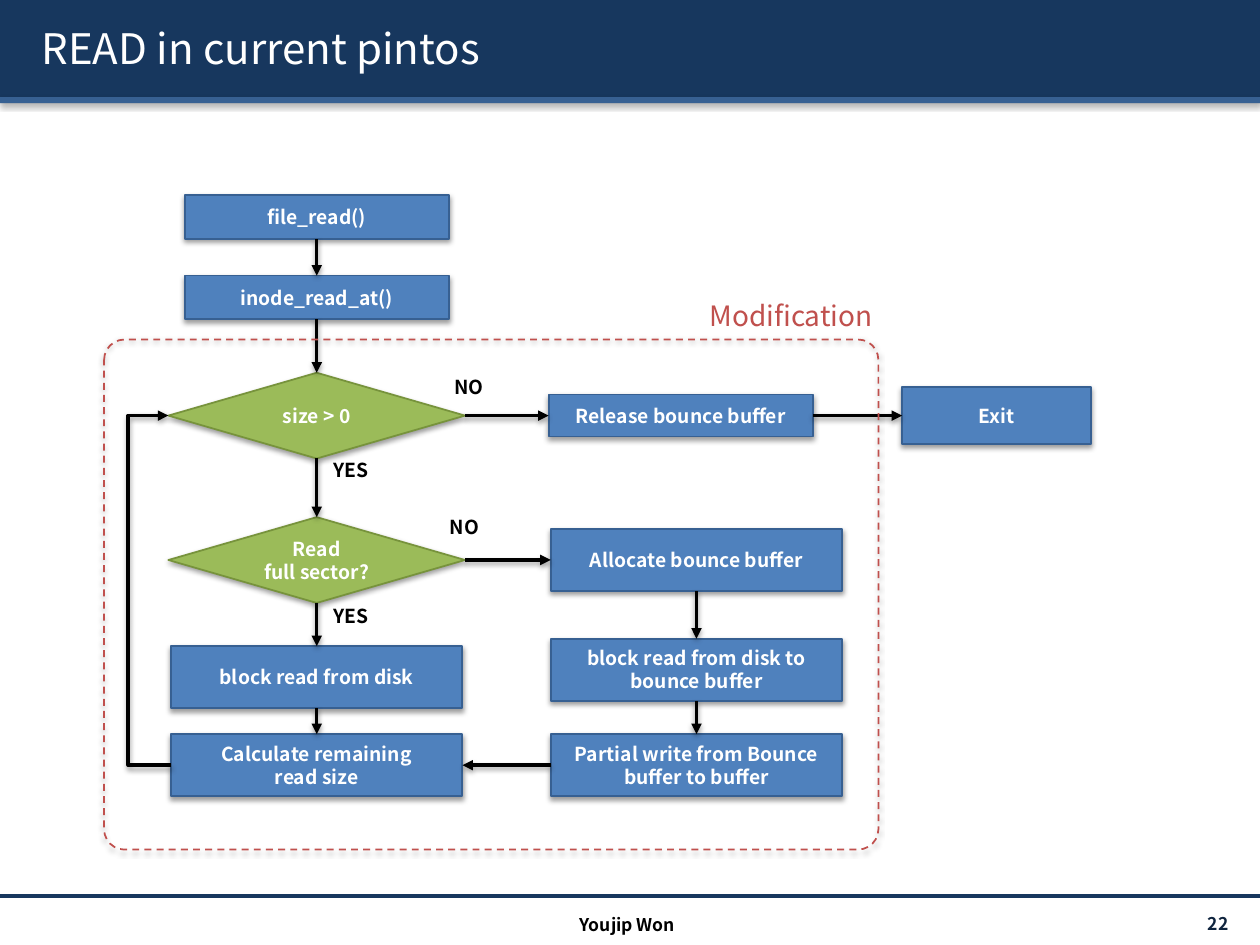
from lxml import etree
from pptx import Presentation
from pptx.dml.color import RGBColor
from pptx.enum.dml import MSO_LINE
from pptx.enum.shapes import MSO_CONNECTOR, MSO_SHAPE
from pptx.enum.text import MSO_ANCHOR, PP_ALIGN
from pptx.oxml import parse_xml
from pptx.oxml.ns import nsdecls, qn
from pptx.util import Pt

RECT, DIAMOND, ROUND = MSO_SHAPE.RECTANGLE, MSO_SHAPE.DIAMOND, MSO_SHAPE.ROUNDED_RECTANGLE
STRAIGHT, ELBOW = MSO_CONNECTOR.STRAIGHT, MSO_CONNECTOR.ELBOW
LEFT, CENTER, RIGHT = PP_ALIGN.LEFT, PP_ALIGN.CENTER, PP_ALIGN.RIGHT
TOP, MIDDLE = MSO_ANCHOR.TOP, MSO_ANCHOR.MIDDLE
DASH = MSO_LINE.DASH
SITE_TOP, SITE_LEFT, SITE_BOTTOM, SITE_RIGHT = range(4)

FONT = "Noto Sans CJK KR"
COLORS = {
    "navy": "17375E", "edge": "376092", "blue": "4F81BD", "green": "9BBB59",
    "olive": "77933C", "red": "C0504D", "number": "0F243E",
    "white": "FFFFFF", "black": "000000",
}
LEFT_X, RIGHT_X, RELEASE_X, EXIT_X = 181, 398, 389, 569.5
CHECK_Y, SECTOR_Y, LAST_Y = 237.5, 320, 437.25
CALL, STEP, RELEASE, EXIT, DECISION = (151, 25), (166.5, 35.5), (151, 24), (108, 32.5), (169.5, 49)
LOOP_X = 73.3

NODES = {
    "file": ("file_read()", LEFT_X, 124, CALL),
    "inode": ("inode_read_at()", LEFT_X, 170, CALL),
    "check": ("size > 0", LEFT_X, CHECK_Y, DECISION),
    "release": ("Release bounce buffer", RELEASE_X, CHECK_Y, RELEASE),
    "exit": ("Exit", EXIT_X, CHECK_Y, EXIT),
    "sector": ("Read\nfull sector?", LEFT_X, SECTOR_Y, DECISION),
    "allocate": ("Allocate bounce buffer", RIGHT_X, SECTOR_Y, STEP),
    "read": ("block read from disk", LEFT_X, 387, STEP),
    "bounce": ("block read from disk to bounce buffer", RIGHT_X, 382.75, STEP),
    "remaining": ("Calculate remaining\nread size", LEFT_X, LAST_Y, STEP),
    "partial": ("Partial write from Bounce buffer to buffer", RIGHT_X, LAST_Y, STEP),
}
DOWN = (SITE_BOTTOM, SITE_TOP)
ACROSS = (SITE_RIGHT, SITE_LEFT)
BACK = (SITE_LEFT, SITE_RIGHT)
ARROWS = [
    ("file", "inode", DOWN), ("inode", "check", DOWN), ("check", "sector", DOWN),
    ("sector", "read", DOWN), ("read", "remaining", DOWN),
    ("check", "release", ACROSS), ("release", "exit", ACROSS),
    ("sector", "allocate", ACROSS), ("allocate", "bounce", DOWN),
    ("bounce", "partial", DOWN), ("partial", "remaining", BACK),
]
LABELS = [
    ("YES", 178, 258.5, 45), ("YES", 178, 341.5, 45),
    ("NO", 248, 211, 40), ("NO", 245.5, 291, 40),
]


def rgb(name):
    return RGBColor.from_string(COLORS[name])


def shadow_effect(blur, distance, angle, alpha):
    return parse_xml(
        f'<a:effectLst {nsdecls("a")}><a:outerShdw blurRad="{Pt(blur)}" dist="{Pt(distance)}" '
        f'dir="{angle * 60000}" algn="ctr" rotWithShape="0"><a:srgbClr val="{COLORS["black"]}">'
        f'<a:alpha val="{alpha * 1000}"/></a:srgbClr></a:outerShdw></a:effectLst>'
    )


def add_shadow(sp):
    sp.element.spPr.append(shadow_effect(3.1, 1.6, 90, 38))


def write(sp, text, size, color, bold=True, align=CENTER, anchor=MIDDLE):
    tf = sp.text_frame
    for name, value in {"text": text, "word_wrap": True, "vertical_anchor": anchor}.items():
        setattr(tf, name, value)
    for p in tf.paragraphs:
        p.alignment = align
        for r in p.runs:
            for name, value in {"size": Pt(size), "bold": bold, "name": FONT}.items():
                setattr(r.font, name, value)
            r.font.color.rgb = rgb(color)


def add_box(s, kind, x, y, w, h, fill=None, line=None):
    sp = s.shapes.add_shape(kind, Pt(x), Pt(y), Pt(w), Pt(h))
    if fill:
        sp.fill.solid()
        sp.fill.fore_color.rgb = rgb(fill)
    else:
        sp.fill.background()
    if line:
        sp.line.color.rgb = rgb(line)
        sp.line.width = Pt(1)
    else:
        sp.line.fill.background()
    add_shadow(sp)
    return sp


def add_node(s, text, cx, cy, size):
    w, h = size
    style = (DIAMOND, "green", "olive") if size == DECISION else (RECT, "blue", "edge")
    kind, fill, line = style
    sp = add_box(s, kind, cx - w / 2, cy - h / 2, w, h, fill, line)
    write(sp, text, 11, "white")
    return sp


def add_text(s, text, x, y, w, h, size, color, **style):
    sp = s.shapes.add_textbox(Pt(x), Pt(y), Pt(w), Pt(h))
    write(sp, text, size, color, **style)


def add_line(s, kind, x1, y1, x2, y2, color):
    c = s.shapes.add_connector(kind, Pt(x1), Pt(y1), Pt(x2), Pt(y2))
    c.line.color.rgb = rgb(color)
    c.line.width = Pt(2)
    return c


def add_arrow(s, start, end, sites, kind=STRAIGHT):
    c = add_line(s, kind, 0, 0, 0, 0, "black")
    c.begin_connect(start, sites[0])
    c.end_connect(end, sites[1])
    etree.SubElement(c.line._get_or_add_ln(), qn("a:tailEnd"), type="triangle")
    add_shadow(c)
    return c


def add_loop(s, start, end):
    c = add_arrow(s, start, end, (SITE_LEFT, SITE_LEFT), ELBOW)
    bend = round((c.begin_x - Pt(LOOP_X)) / (c.begin_x - c.end_x) * 100000)
    guides = c.element.spPr.find(qn("a:prstGeom")).get_or_add_avLst()
    etree.SubElement(guides, qn("a:gd"), name="adj1", fmla=f"val {bend}")


def add_title(s, text):
    sp = s.shapes.title
    sp.element.getparent().append(sp.element)
    for name, value in {"left": 16.5, "top": 4.5, "width": 692, "height": 46}.items():
        setattr(sp, name, Pt(value))
    write(sp, text, 24, "white", bold=False, align=LEFT)
    r = sp.text_frame.paragraphs[0].runs[0]
    r.font.fill._xPr.find(qn("a:solidFill")).addnext(shadow_effect(3, 3, 45, 100))


def add_frame(s):
    add_box(s, RECT, 0, 0, 720, 55.5, "navy")
    add_box(s, RECT, 0, 55.5, 720, 3.5, "edge")
    c = add_line(s, STRAIGHT, 0, 512, 720, 512, "navy")
    etree.SubElement(c.element.spPr, qn("a:effectLst"))
    add_title(s, "READ in current pintos")
    add_text(s, "Youjip Won", 239, 518.5, 239, 17.5, 10, "black", anchor=TOP)
    add_text(s, "22", 625, 519, 84, 17.5, 10, "number", align=RIGHT)


def add_modification(s):
    sp = add_box(s, ROUND, 59.5, 194, 442.5, 291.5, line="red")
    sp.adjustments[0] = 0.04
    sp.line.dash_style = DASH
    add_text(s, "Modification", 398.5, 167, 108, 26.5, 16, "red",
             bold=False, align=LEFT, anchor=TOP)


def main():
    prs = Presentation()
    prs.slide_width, prs.slide_height = Pt(720), Pt(540)
    s = prs.slides.add_slide(prs.slide_layouts[5])
    add_frame(s)
    nodes = {name: add_node(s, *node) for name, node in NODES.items()}
    for start, end, sites in ARROWS:
        add_arrow(s, nodes[start], nodes[end], sites)
    add_loop(s, nodes["remaining"], nodes["check"])
    for text, x, y, w in LABELS:
        add_text(s, text, x, y, w, 25, 11, "black", anchor=TOP)
    add_modification(s)
    prs.save("out.pptx")


if __name__ == "__main__":
    main()
